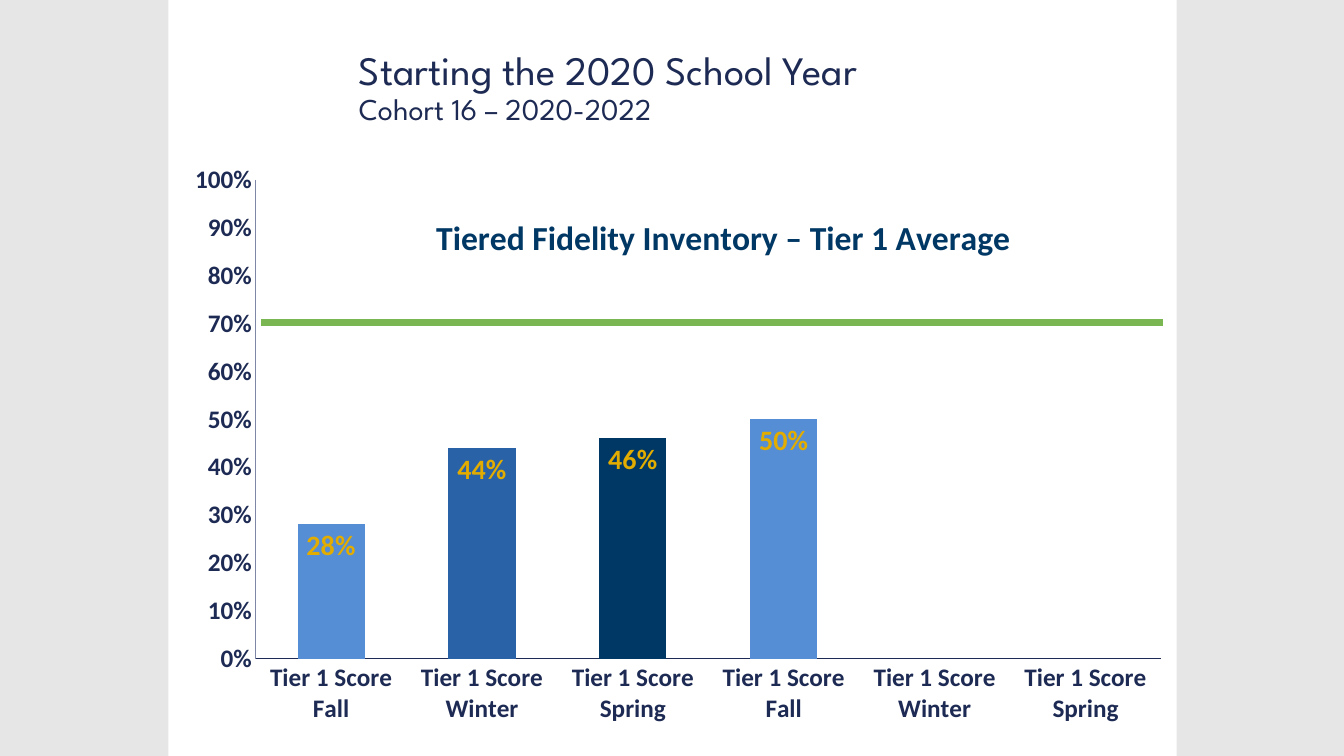
"""Build the Tier 1 average slide for Cohort 16."""
import pptx
import pptx.chart.data
import pptx.dml.color
import pptx.enum.chart
import pptx.enum.shapes
import pptx.enum.text
import pptx.oxml
import pptx.oxml.ns
import pptx.util
from pptx.util import Inches, Pt

RGBColor = pptx.dml.color.RGBColor
GREY = RGBColor(0xE7, 0xE6, 0xE6)
WHITE = RGBColor(0xFF, 0xFF, 0xFF)
INK = RGBColor(0x1D, 0x2A, 0x53)
AXIS_GREY = RGBColor(0x7E, 0x87, 0xA6)
LIGHT_BLUE = RGBColor(0x55, 0x8E, 0xD5)
MID_BLUE = RGBColor(0x29, 0x62, 0xA7)
NAVY = RGBColor(0x00, 0x38, 0x65)
GOLD = RGBColor(0xE2, 0xAC, 0x00)
GREEN = RGBColor(0x7A, 0xB7, 0x52)


def set_font(font, size, color, bold=True, name="Calibri"):
    font.size, font.bold, font.name = Pt(size), bold, name
    font.color.rgb = color


def set_layout(element, **values):
    for old in element.findall(pptx.oxml.ns.qn("c:layout")):
        element.remove(old)
    items = "".join(f'<c:{tag} val="{val}"/>' for tag, val in values.items())
    layout = pptx.oxml.parse_xml(
        f'<c:layout {pptx.oxml.ns.nsdecls("c")}><c:manualLayout>{items}'
        "</c:manualLayout></c:layout>")
    has_text = element.find(pptx.oxml.ns.qn("c:tx")) is not None
    element.insert(1 if has_text else 0, layout)


prs = pptx.Presentation()
prs.slide_width, prs.slide_height = Inches(13.33), Inches(7.5)
s = prs.slides.add_slide(prs.slide_layouts[5])
s.background.fill.solid()
s.background.fill.fore_color.rgb = GREY

panel = s.shapes.add_shape(pptx.enum.shapes.MSO_SHAPE.RECTANGLE,
                           Inches(1.67), 0, Inches(10), Inches(7.5))
panel.shadow.inherit = False
panel.fill.solid()
panel.fill.fore_color.rgb = WHITE
panel.line.fill.background()
s.shapes.title.element.addprevious(panel.element)

title = s.shapes.title
title.left, title.top = Inches(3.46), Inches(0.38)
title.width, title.height = Inches(7.64), Inches(1)
tf = title.text_frame
tf.text = "Starting the 2020 School Year\vCohort 16 – 2020-2022"
tf.vertical_anchor = pptx.enum.text.MSO_ANCHOR.MIDDLE
tf.auto_size = pptx.enum.text.MSO_AUTO_SIZE.NONE
p = tf.paragraphs[0]
p.alignment = pptx.enum.text.PP_ALIGN.LEFT
p.line_spacing = 0.9
for r, size in zip(p.runs, (28.8, 21.6)):
    set_font(r.font, size, INK, False, "League Spartan")

data = pptx.chart.data.CategoryChartData(number_format="0%")
data.categories = [f"Tier 1 Score\n{term}"
                   for term in ("Fall", "Winter", "Spring") * 2]
data.add_series("Series 1", (0.28, 0.44, 0.46, 0.5, None, None))
chart = s.shapes.add_chart(
    pptx.enum.chart.XL_CHART_TYPE.COLUMN_CLUSTERED,
    Inches(1.85), Inches(1.61), Inches(9.67), Inches(5.74), data).chart
chart.has_legend = False
chart.font.name, chart.font.size = "Calibri", Pt(10)

chart.has_title = True
heading = chart.chart_title
heading.text_frame.text = "Tiered Fidelity Inventory – Tier 1 Average"
set_font(heading.text_frame.paragraphs[0].runs[0].font, 24, NAVY)
heading.include_in_layout = False
set_layout(heading._element, xMode="edge", yMode="edge", x=0.25, y=0.08)
overlay = heading._element.find(pptx.oxml.ns.qn("c:overlay"))
if overlay is not None:
    overlay.set("val", "1")
set_layout(chart._chartSpace.chart.plotArea, layoutTarget="inner",
           xMode="edge", yMode="edge", x=0.071, y=0.03, w=0.929, h=0.828)

for axis, color in ((chart.category_axis, INK), (chart.value_axis, AXIS_GREY)):
    axis.has_major_gridlines = False
    axis.major_tick_mark = pptx.enum.chart.XL_TICK_MARK.NONE
    axis.minor_tick_mark = pptx.enum.chart.XL_TICK_MARK.NONE
    set_font(axis.tick_labels.font, 18, INK)
    axis.format.line.color.rgb = color
    axis.format.line.width = Pt(0.75)
axis = chart.value_axis
axis.minimum_scale, axis.maximum_scale, axis.major_unit = 0, 1, 0.1
axis.tick_labels.number_format = "0%"
axis.tick_labels.number_format_is_linked = False

plot = chart.plots[0]
plot.gap_width, plot.overlap = 125, -100
plot.vary_by_categories = False
scores = plot.series[0]
for i, color in enumerate((LIGHT_BLUE, MID_BLUE, NAVY) * 2):
    fill = scores.points[i].format.fill
    fill.solid()
    fill.fore_color.rgb = color
labels = scores.data_labels
labels.show_value = True
labels.position = pptx.enum.chart.XL_LABEL_POSITION.INSIDE_END
labels.number_format = "0%"
labels.number_format_is_linked = False
set_font(labels.font, 20, GOLD)

goal = s.shapes.add_connector(pptx.enum.shapes.MSO_CONNECTOR.STRAIGHT,
                              Inches(2.59), Inches(3.2), Inches(11.53), Inches(3.2))
goal.line.color.rgb = GREEN
goal.line.width = Pt(4.5)
goal._element.spPr.append(pptx.oxml.parse_xml(
    f'<a:effectLst {pptx.oxml.ns.nsdecls("a")}/>'))

prs.save("out.pptx")
